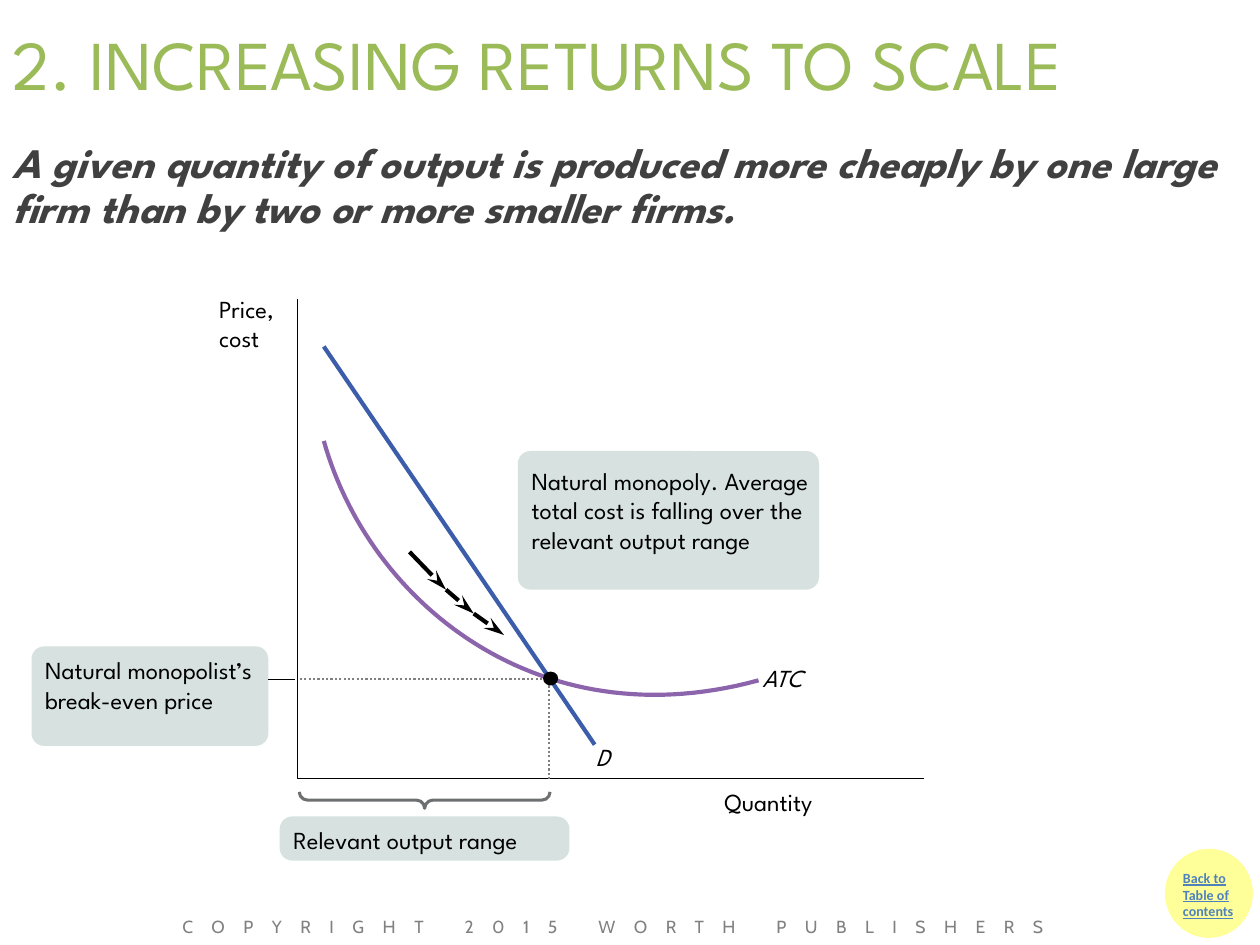
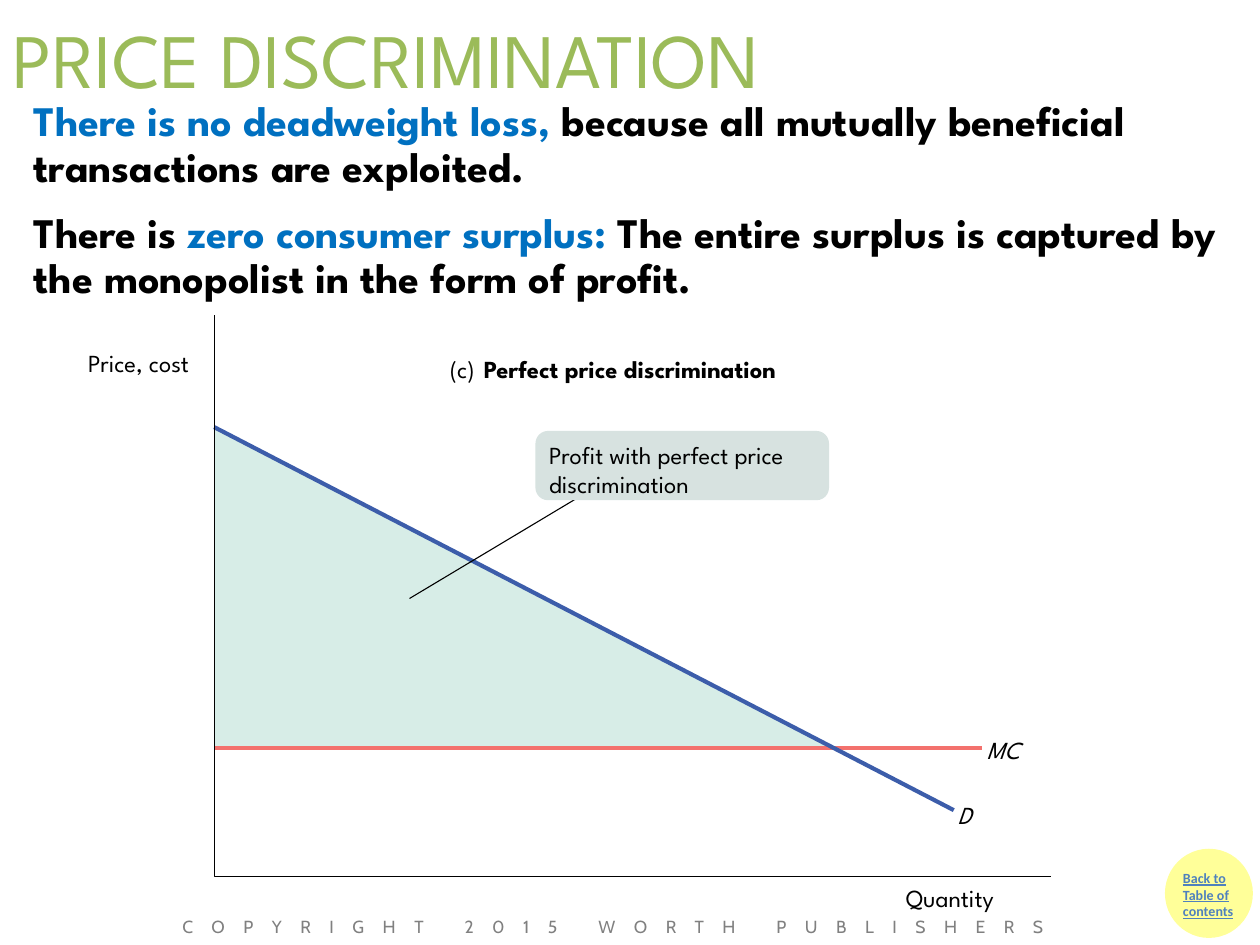
from lxml import etree
from pptx import Presentation
from pptx.dml.color import RGBColor
from pptx.enum.dml import MSO_LINE
from pptx.enum.shapes import MSO_CONNECTOR, MSO_SHAPE
from pptx.enum.text import MSO_ANCHOR, MSO_AUTO_SIZE, PP_ALIGN
from pptx.oxml.ns import qn
from pptx.util import Inches, Pt

STRAIGHT = MSO_CONNECTOR.STRAIGHT
DOTTED = MSO_LINE.ROUND_DOT
OVAL, ROUNDED, BRACE = MSO_SHAPE.OVAL, MSO_SHAPE.ROUNDED_RECTANGLE, MSO_SHAPE.LEFT_BRACE
TOP, MIDDLE = MSO_ANCHOR.TOP, MSO_ANCHOR.MIDDLE
LEFT = PP_ALIGN.LEFT
TITLE_ONLY = 5

COLORS = {
    "title": "9BBB59", "statement": "404040", "black": "000000",
    "key": "0070C0", "footer": "808080", "guide": "808080",
    "callout": "D7E2E0", "demand": "3C5DAA", "atc": "8C64AB",
    "mc": "F3716D", "profit": "D7EDE7", "brace": "6D6F71",
    "badge": "FFFF99", "badge_text": "4F81BD",
}
FONT = "League Spartan"
CURVE_WIDTH = 2.38
CORNER = 0.1
NO_INSETS = (0, 0, 0, 0)
BOX_INSETS = (0.1, 0.05, 0.1, 0.05)


def rgb(name):
    return RGBColor.from_string(COLORS[name])


def bezier(p0, p1, p2, p3, steps=60):
    """Points along a cubic Bezier curve."""
    points = []
    for step in range(steps + 1):
        t = step / steps
        weights = ((1 - t) ** 3, 3 * t * (1 - t) ** 2, 3 * t * t * (1 - t), t ** 3)
        points.append(tuple(sum(w * p[axis] for w, p in zip(weights, (p0, p1, p2, p3)))
                            for axis in (0, 1)))
    return points


class Deck:
    def __init__(self):
        self.prs = Presentation()
        self.prs.slide_width, self.prs.slide_height = Inches(10), Inches(7.5)
        self.slide = None

    def new_slide(self, title, size, height):
        self.slide = self.prs.slides.add_slide(self.prs.slide_layouts[TITLE_ONLY])
        heading = self.slide.shapes.title
        heading.left, heading.top = Inches(0), Inches(0)
        heading.width, heading.height = Inches(10), Inches(height)
        self.fill_frame(heading.text_frame, [[(title, "title")]], size,
                        BOX_INSETS, anchor=MIDDLE)
        self.badge()
        self.footer()

    def badge(self):
        self.shape(OVAL, 9.26, 6.75, 0.67, 0.68, fill="badge", line="badge", width=2)
        self.text(9.29, 6.85, 0.72, 0.67, [[("Back to Table of contents", "badge_text")]],
                  8, BOX_INSETS, font="Calibri", bold=True, underline=True)

    def footer(self):
        frame = self.text(1.35, 7.22, 7.76, 0.25,
                          [[("COPYRIGHT 2015 WORTH PUBLISHERS", "footer")]],
                          10, BOX_INSETS, font="Cabin")
        frame.paragraphs[0].runs[0].font._element.set("spc", "1060")

    def fill_frame(self, frame, paragraphs, size, insets, font=FONT, bold=False,
                   italic=False, underline=False, spacing=None, after=0, anchor=TOP):
        """Write paragraphs, each a list of (text, colour) runs."""
        frame.word_wrap = True
        frame.auto_size = MSO_AUTO_SIZE.NONE
        frame.vertical_anchor = anchor
        (frame.margin_left, frame.margin_top,
         frame.margin_right, frame.margin_bottom) = map(Inches, insets)
        for index, runs in enumerate(paragraphs):
            paragraph = frame.add_paragraph() if index else frame.paragraphs[0]
            paragraph.alignment = LEFT
            paragraph.line_spacing = spacing
            paragraph.space_after = Pt(after)
            for words, color in runs:
                run = paragraph.add_run()
                run.text = words
                run.font.name, run.font.size = font, Pt(size)
                run.font.bold, run.font.italic = bold, italic
                run.font.underline = underline
                run.font.color.rgb = rgb(color)

    def text(self, x, y, w, h, paragraphs, size, insets, **style):
        box = self.slide.shapes.add_textbox(Inches(x), Inches(y), Inches(w), Inches(h))
        self.fill_frame(box.text_frame, paragraphs, size, insets, **style)
        return box.text_frame

    def label(self, x, y, w, words, h=0.24, **style):
        self.text(x, y, w, h, [[(words, "black")]], 14, NO_INSETS, **style)

    def paint(self, shape, fill=None, line=None, width=1):
        shape.shadow.inherit = False
        if fill:
            shape.fill.solid()
            shape.fill.fore_color.rgb = rgb(fill)
        else:
            shape.fill.background()
        if line:
            shape.line.color.rgb = rgb(line)
            shape.line.width = Pt(width)
        else:
            shape.line.fill.background()
        return shape

    def shape(self, kind, x, y, w, h, **style):
        shape = self.slide.shapes.add_shape(kind, Inches(x), Inches(y), Inches(w), Inches(h))
        return self.paint(shape, **style)

    def callout(self, x, y, w, h, words, top=0.04):
        box = self.shape(ROUNDED, x, y, w, h, fill="callout")
        box.adjustments[0] = CORNER / min(w, h)
        self.fill_frame(box.text_frame, [[(words, "black")]], 14, (0.08, top, 0, 0))

    def outline(self, points, closed=False, **style):
        corners = [(Inches(x), Inches(y)) for x, y in points]
        builder = self.slide.shapes.build_freeform(*corners[0])
        builder.add_line_segments(corners[1:], close=closed)
        return self.paint(builder.convert_to_shape(), **style)

    def line(self, start, end, color, width, dash=None, arrow=False):
        connector = self.slide.shapes.add_connector(
            STRAIGHT, *(Inches(value) for value in (*start, *end)))
        connector.line.color.rgb = rgb(color)
        connector.line.width = Pt(width)
        if dash:
            connector.line.dash_style = dash
        if arrow:
            etree.SubElement(connector.line._get_or_add_ln(), qn("a:tailEnd"),
                             type="stealth", w="med", len="lg")
        etree.SubElement(connector._element.spPr, qn("a:effectLst"))

    def axes(self, left, top, right, bottom, width):
        self.outline([(right, bottom), (left, bottom), (left, top)],
                     line="black", width=width)


def returns_to_scale(deck):
    deck.new_slide("2. INCREASING RETURNS TO SCALE", 40, 1)
    deck.text(0, 1.08, 10, 0.83,
              [[("A given quantity of output is produced more cheaply by one large "
                 "firm than by two or more smaller firms.", "statement")]],
              24, BOX_INSETS, bold=True, italic=True, spacing=0.9)

    deck.axes(2.36, 2.37, 7.33, 6.18, 0.5)
    deck.label(1.74, 2.33, 0.53, "Price, cost", h=0.47)
    deck.label(5.75, 6.25, 0.9, "Quantity")

    deck.outline(bezier((2.57, 3.5), (2.93, 4.78), (4.27, 5.88), (6.02, 5.4)),
                 line="atc", width=CURVE_WIDTH)
    deck.label(6.05, 5.26, 0.43, "ATC", italic=True)
    deck.line((2.57, 2.75), (4.72, 5.91), "demand", CURVE_WIDTH)
    deck.label(4.73, 5.89, 0.18, "D", italic=True)

    deck.line((4.36, 5.44), (4.36, 6.19), "guide", 1.25, dash=DOTTED)
    deck.line((2.38, 5.39), (4.33, 5.39), "guide", 1.25, dash=DOTTED)
    deck.shape(OVAL, 4.31, 5.33, 0.12, 0.11, fill="black")

    falling_cost = [(3.25, 4.38), (3.54, 4.68), (3.76, 4.87), (4, 5.04)]
    for start, end in zip(falling_cost, falling_cost[1:]):
        deck.line(start, end, "black", CURVE_WIDTH, arrow=True)

    deck.callout(4.11, 3.58, 2.39, 1.1, "Natural monopoly. Average total cost is "
                 "falling over the relevant output range", top=0.09)
    deck.callout(0.25, 5.13, 1.88, 0.79, "Natural monopolist’s break-even price")
    deck.line((2.34, 5.39), (2.13, 5.39), "black", 0.5)
    deck.callout(2.22, 6.48, 2.3, 0.35, "Relevant output range")

    span, depth, middle_x, middle_y = 1.99, 0.13, 3.37, 6.35
    brace = deck.shape(BRACE, middle_x - depth / 2, middle_y - span / 2, depth, span,
                       line="brace", width=1.75)
    brace.adjustments[0] = 0.5
    brace.rotation = 270


def price_discrimination(deck):
    deck.new_slide("PRICE DISCRIMINATION", 44, 0.92)
    deck.text(0.17, 0.75, 9.83, 1.7, [
        [("There is no deadweight loss, ", "key"),
         ("because all mutually beneficial transactions are exploited.", "black")],
        [("There is ", "black"), ("zero consumer surplus: ", "key"),
         ("The entire surplus is captured by the monopolist in the form of profit.",
          "black")],
    ], 24, BOX_INSETS, bold=True, spacing=0.9, after=12)

    deck.outline([(1.7, 3.39), (1.7, 5.92), (6.58, 5.92)], closed=True, fill="profit")
    deck.line((1.7, 5.94), (7.79, 5.94), "mc", CURVE_WIDTH)
    deck.label(7.83, 5.83, 0.37, "MC", italic=True)
    deck.line((1.7, 3.39), (7.57, 6.43), "demand", CURVE_WIDTH)
    deck.label(7.6, 6.35, 0.28, "D", italic=True)

    deck.axes(1.7, 2.5, 8.34, 6.96, 0.63)
    deck.label(0.7, 2.76, 0.98, "Price, cost")
    deck.label(7.19, 7.01, 0.9, "Quantity")
    deck.label(3.57, 2.81, 0.27, "(c)")
    deck.label(3.84, 2.81, 2.58, "Perfect price discrimination", bold=True)

    deck.line((3.25, 4.75), (4.92, 3.75), "black", 0.63)
    deck.callout(4.25, 3.42, 2.33, 0.55, "Profit with perfect price discrimination")


def main():
    deck = Deck()
    returns_to_scale(deck)
    price_discrimination(deck)
    deck.prs.save("out.pptx")


if __name__ == "__main__":
    main()
